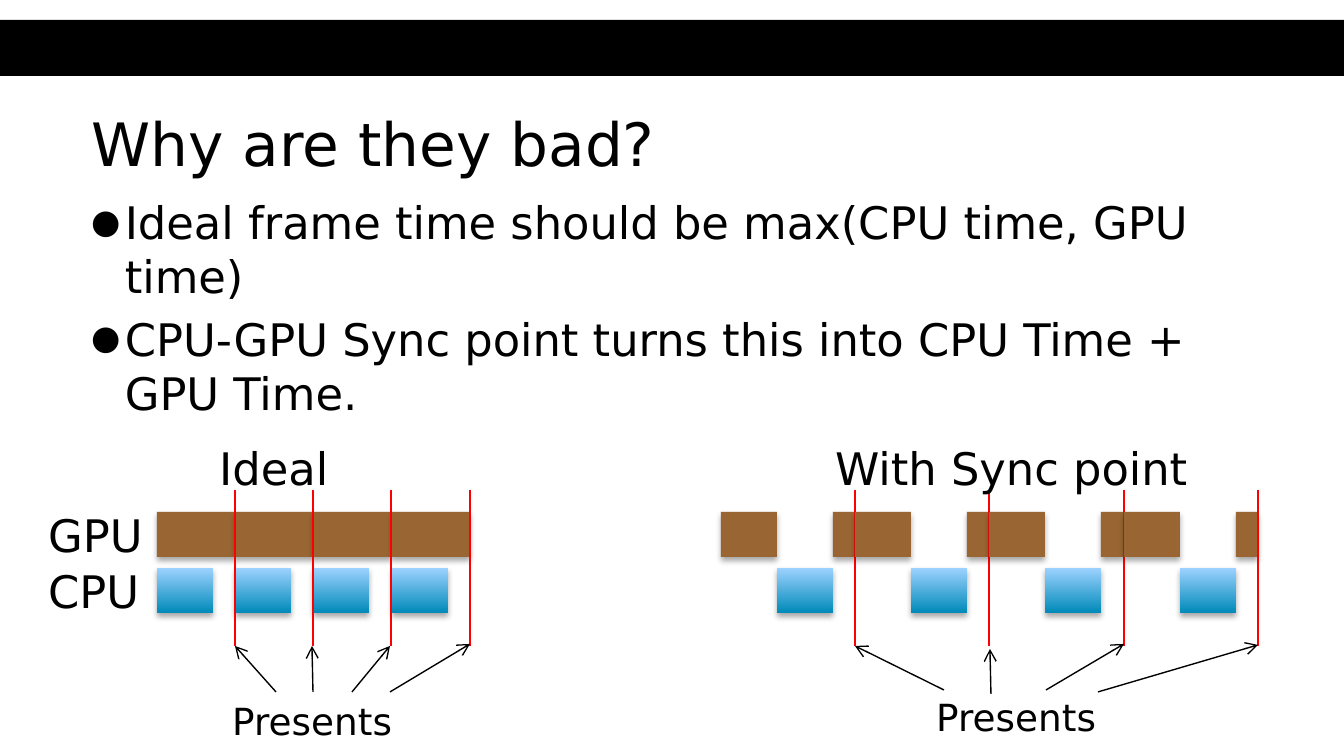
"""Build the slide comparing ideal and synchronised CPU and GPU frame times."""
from lxml import etree
from pptx import Presentation
from pptx.dml.color import RGBColor
from pptx.enum.shapes import MSO_CONNECTOR, MSO_SHAPE
from pptx.enum.text import MSO_ANCHOR, MSO_AUTO_SIZE, PP_ALIGN
from pptx.oxml import parse_xml
from pptx.oxml.ns import nsdecls, qn
from pptx.util import Pt

SCALE = 914400 / 134.4
RECTANGLE = MSO_SHAPE.RECTANGLE
STRAIGHT = MSO_CONNECTOR.STRAIGHT
MIDDLE, TOP = MSO_ANCHOR.MIDDLE, MSO_ANCHOR.TOP
NO_FIT, FIT_SHAPE = MSO_AUTO_SIZE.NONE, MSO_AUTO_SIZE.SHAPE_TO_FIT_TEXT
LEFT = PP_ALIGN.LEFT

COLORS = {"ink": "000000", "gpu": "996633", "cpu_bottom": "008AB9",
          "cpu_top": "9DD2FF", "present": "FF0000"}
FONT = "DejaVu Sans"
GPU_TOP, CPU_TOP, BAR_HEIGHT = 512, 568, 45
CPU_WIDTH, IDEAL_GPU_WIDTH, WAIT_WIDTH = 56, 78, 22
PRESENT_TOP, PRESENT_BOTTOM = 490, 646

IDEAL_FRAMES = (157, 235, 313, 392)
IDEAL_PRESENTS = (235, 313, 391, 470)
SYNC_FRAMES = (721, 855, 989, 1124)
SYNC_PRESENTS = (855, 989, 1124, 1258)

BULLETS = (
    "Ideal frame time should be max(CPU time, GPU time)",
    "CPU-GPU Sync point turns this into CPU Time + GPU Time.",
)
LABELS = (
    ("Ideal", (206, 434, 141, 67), 24),
    ("GPU", (35, 501, 122, 67), 24),
    ("CPU", (35, 557, 120, 67), 24),
    ("With Sync point", (822, 434, 387, 67), 24),
    ("Presents", (219, 692, 188, 59), 20),
    ("Presents", (923, 688, 188, 59), 20),
)
ARROWS = (
    ((276, 692), (235, 646)),
    ((313, 692), (312, 646)),
    ((352, 692), (390, 646)),
    ((390, 692), (470, 644)),
    ((944, 690), (855, 646)),
    ((991, 694), (990, 649)),
    ((1046, 690), (1124, 644)),
    ((1098, 692), (1258, 645)),
)


def px(value):
    """Convert pixels to EMU."""
    return round(value * SCALE)


def rgb(name):
    """Return a named colour."""
    return RGBColor.from_string(COLORS[name])


def set_values(target, values):
    """Set attributes from a dict of format values."""
    for name, value in values.items():
        setattr(target, name, value)


def write(paragraph, text, size):
    """Put formatted text into a paragraph."""
    paragraph.text = text
    set_values(paragraph.font, {"name": FONT, "size": Pt(size)})
    paragraph.font.color.rgb = rgb("ink")


def add_title(slide, text):
    """Place and format the title."""
    title = slide.shapes.title
    set_values(title, {"left": px(78), "top": px(98), "width": px(1187), "height": px(90)})
    set_values(title.text_frame, {"word_wrap": True, "auto_size": NO_FIT,
                                  "vertical_anchor": MIDDLE})
    paragraph = title.text_frame.paragraphs[0]
    write(paragraph, text, 32)
    paragraph.alignment = LEFT


def add_bullet(paragraph):
    """Give a paragraph a hanging round bullet."""
    properties = paragraph._p.get_or_add_pPr()
    properties.set("marL", "228600")
    properties.set("indent", "-228600")
    color = etree.SubElement(properties, qn("a:buClr"))
    etree.SubElement(color, qn("a:srgbClr"), val=COLORS["ink"])
    etree.SubElement(properties, qn("a:buSzPct"), val="75000")
    etree.SubElement(properties, qn("a:buFont"), typeface=FONT)
    etree.SubElement(properties, qn("a:buChar"), char="●")


def add_body(slide):
    """Add the bulleted text."""
    shape = slide.shapes.add_textbox(px(78), px(188), px(1187), px(504))
    frame = shape.text_frame
    set_values(frame, {"word_wrap": True, "auto_size": NO_FIT, "vertical_anchor": TOP})
    for index, text in enumerate(BULLETS):
        paragraph = frame.add_paragraph() if index else frame.paragraphs[0]
        add_bullet(paragraph)
        write(paragraph, text, 24)
        if index:
            paragraph.space_before = Pt(5)


def add_label(slide, text, box, size):
    """Add a single-line label."""
    frame = slide.shapes.add_textbox(*map(px, box)).text_frame
    set_values(frame, {"word_wrap": False, "auto_size": FIT_SHAPE})
    write(frame.paragraphs[0], text, size)


def add_box(slide, left, top, width, height):
    """Add a rectangle without outline or shadow."""
    shape = slide.shapes.add_shape(RECTANGLE, *map(px, (left, top, width, height)))
    shape.shadow.inherit = False
    shape.line.fill.background()
    return shape


def add_banner(slide):
    """Add the black band across the slide."""
    shape = add_box(slide, 0, 20, 1344, 56)
    shape.fill.solid()
    shape.fill.fore_color.rgb = rgb("ink")


def add_shadow(shape):
    """Add a soft shadow below a shape."""
    effects = shape._element.spPr.find(qn("a:effectLst"))
    effects.append(parse_xml(
        f'<a:outerShdw {nsdecls("a")} blurRad="40000" dist="23000" dir="5400000" '
        f'rotWithShape="0"><a:srgbClr val="{COLORS["ink"]}"><a:alpha val="35000"/>'
        '</a:srgbClr></a:outerShdw>'))


def add_gpu(slide, left, width):
    """Add a GPU work bar."""
    shape = add_box(slide, left, GPU_TOP, width, BAR_HEIGHT)
    shape.fill.solid()
    shape.fill.fore_color.rgb = rgb("gpu")
    add_shadow(shape)


def add_cpu(slide, left):
    """Add a CPU work bar."""
    shape = add_box(slide, left, CPU_TOP, CPU_WIDTH, BAR_HEIGHT)
    shape.fill.gradient()
    shape.fill.gradient_angle = 90
    for stop, name in zip(shape.fill.gradient_stops, ("cpu_bottom", "cpu_top")):
        stop.color.rgb = rgb(name)
    add_shadow(shape)


def add_line(slide, start, end, color):
    """Add a thin straight line."""
    line = slide.shapes.add_connector(STRAIGHT, *map(px, (*start, *end)))
    line.line.width = Pt(0.75)
    line.line.color.rgb = rgb(color)
    etree.SubElement(line._element.spPr, qn("a:effectLst"))
    return line


def add_present(slide, left):
    """Add a vertical marker where a frame is presented."""
    add_line(slide, (left, PRESENT_TOP), (left, PRESENT_BOTTOM), "present")


def add_arrow(slide, start, end):
    """Add an arrow pointing at a present marker."""
    arrow = add_line(slide, start, end, "ink")
    etree.SubElement(arrow.line._get_or_add_ln(), qn("a:tailEnd"), type="arrow")


def add_ideal_timeline(slide):
    """Add frames whose CPU and GPU work overlap."""
    for left in IDEAL_FRAMES:
        add_gpu(slide, left, IDEAL_GPU_WIDTH)
        add_cpu(slide, left)
    for left in IDEAL_PRESENTS:
        add_present(slide, left)


def add_sync_timeline(slide):
    """Add frames whose CPU and GPU work alternate."""
    for left, present in zip(SYNC_FRAMES, SYNC_PRESENTS):
        add_gpu(slide, left, CPU_WIDTH)
        add_cpu(slide, left + CPU_WIDTH)
        add_gpu(slide, left + 2 * CPU_WIDTH, WAIT_WIDTH)
        add_present(slide, present)


def main():
    """Build and save the slide."""
    presentation = Presentation()
    set_values(presentation, {"slide_width": px(1344), "slide_height": px(756)})
    slide = presentation.slides.add_slide(presentation.slide_layouts[5])
    add_banner(slide)
    add_title(slide, "Why are they bad?")
    add_body(slide)
    add_ideal_timeline(slide)
    add_sync_timeline(slide)
    for label in LABELS:
        add_label(slide, *label)
    for arrow in ARROWS:
        add_arrow(slide, *arrow)
    presentation.save("out.pptx")


if __name__ == "__main__":
    main()
